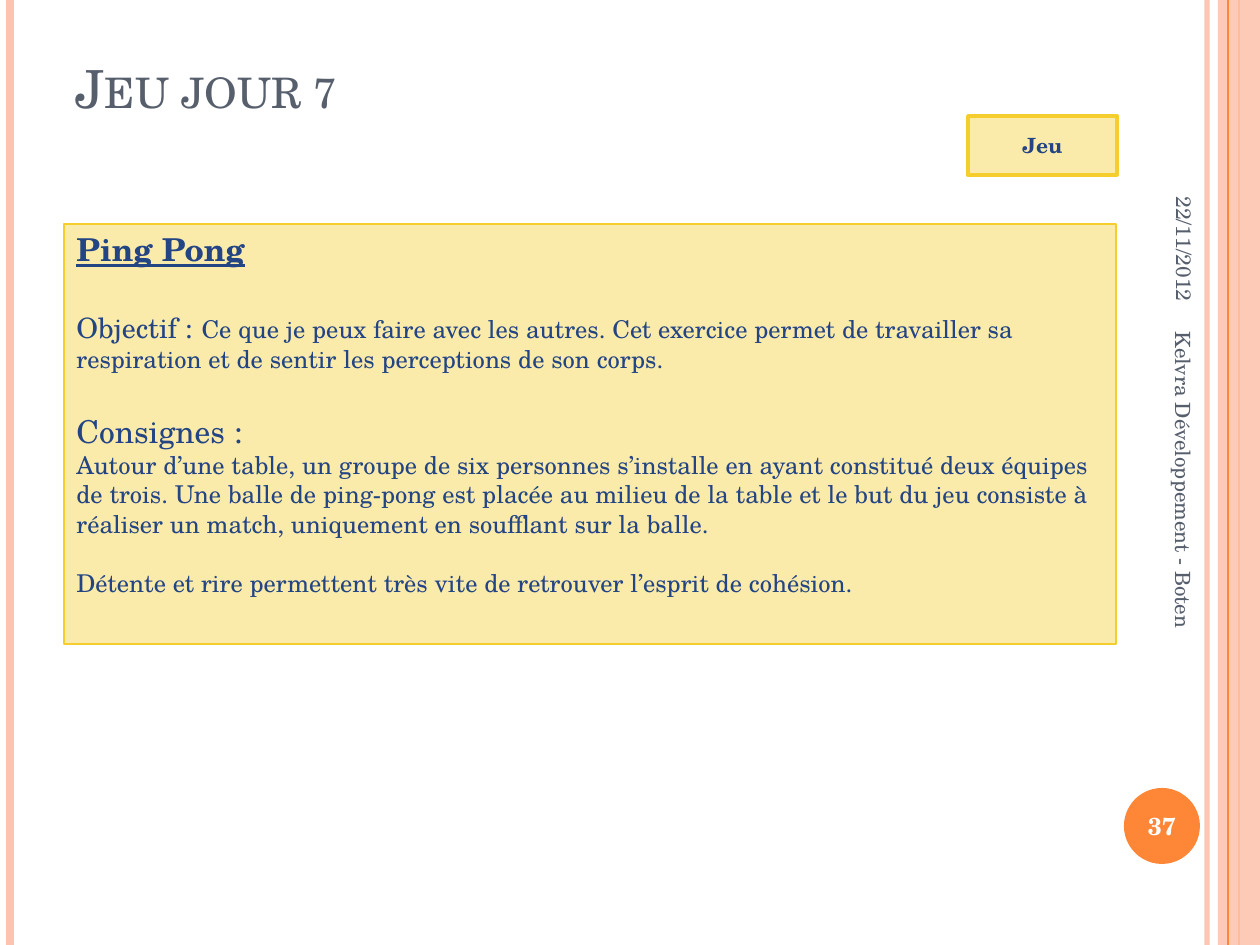
from lxml import etree
from pptx import Presentation
from pptx import util as u
from pptx.dml.color import RGBColor
from pptx.enum import shapes, text
from pptx.oxml import ns

PX = 914400 / 126
FONT = "TeX Gyre Schola"
PEACH, ORANGE, GREY, NAVY = "FEC3AE", "FE8637", "575F6D", "244583"
CREAM, GOLD, WHITE = "FBEBAB", "F5CD2D", "FFFFFF"
LEFT, CENTER, RIGHT = text.PP_ALIGN.LEFT, text.PP_ALIGN.CENTER, text.PP_ALIGN.RIGHT
TOP, MIDDLE, BOTTOM = text.MSO_ANCHOR.TOP, text.MSO_ANCHOR.MIDDLE, text.MSO_ANCHOR.BOTTOM


def emu(*lengths):
    return [u.Emu(round(n * PX)) for n in lengths]


def paint(color_format, color, opacity=100):
    color_format.rgb = RGBColor.from_string(color)
    if opacity < 100:
        for rgb in color_format._xFill.iter(ns.qn("a:srgbClr")):
            etree.SubElement(rgb, ns.qn("a:alpha"), val=str(opacity * 1000))


def add_run(paragraph, words, size, color, bold=False, underline=False):
    run = paragraph.add_run()
    run.text = words
    font = run.font
    font.name, font.size = FONT, u.Pt(size)
    font.bold, font.underline = bold, underline
    paint(font.color, color)
    return run


def set_frame(shape, anchor, align=LEFT, wrap=True):
    """Prepare the text frame and return its first paragraph."""
    frame = shape.text_frame
    frame.word_wrap, frame.vertical_anchor = wrap, anchor
    frame.auto_size = text.MSO_AUTO_SIZE.NONE
    frame.paragraphs[0].alignment = align
    return frame.paragraphs[0]


def add_block(slide, kind, box, fill, line=None, width=0, opacity=100):
    block = slide.shapes.add_shape(kind, *emu(*box))
    block.shadow.inherit = False
    block.fill.solid()
    paint(block.fill.fore_color, fill, opacity)
    if line:
        paint(block.line.color, line)
        block.line.width = u.Pt(width)
    else:
        block.line.fill.background()
    return block


def add_rule(slide, x, height, color, width, opacity=100):
    rule = slide.shapes.add_connector(shapes.MSO_CONNECTOR.STRAIGHT, *emu(x, 0, x, height))
    rule.line.width = u.Pt(width)
    paint(rule.line.color, color, opacity)
    etree.SubElement(rule._element.spPr, ns.qn("a:effectLst"))


def add_borders(slide, width, height):
    add_rule(slide, width - 53, height, PEACH, 3, 93)
    add_rule(slide, 10, height, PEACH, 4.5)
    add_rule(slide, width - 21, height, ORANGE, 1.5)
    add_block(slide, shapes.MSO_SHAPE.RECTANGLE, (width - 42, 0, 42, height), PEACH, opacity=87)
    add_rule(slide, width - 32, height, ORANGE, 0.75)


def add_title(slide, box, words):
    title = slide.shapes.title
    title.left, title.top, title.width, title.height = emu(*box)
    run = add_run(set_frame(title, BOTTOM), words, 30, GREY)
    run.font._element.set("cap", "small")


def add_side_text(slide, box, words, align):
    """Add text turned clockwise; box is as it stands before the turn."""
    side = slide.shapes.add_textbox(*emu(*box))
    side.rotation = 90
    add_run(set_frame(side, MIDDLE, align), words, 12, GREY)


def add_page_number(slide, box, number):
    badge = add_block(slide, shapes.MSO_SHAPE.OVAL, box, ORANGE)
    add_run(set_frame(badge, MIDDLE, CENTER, wrap=False), number, 14, WHITE, bold=True)


def add_tag(slide, box, words):
    tag = add_block(slide, shapes.MSO_SHAPE.RECTANGLE, box, CREAM, GOLD, 2)
    add_run(set_frame(tag, MIDDLE, CENTER), words, 12, NAVY, bold=True)


def add_game(slide, box, name, sections):
    """Add the card; each section is (space before, [(words, size), ...])."""
    card = add_block(slide, shapes.MSO_SHAPE.RECTANGLE, box, CREAM, GOLD, 0.75)
    add_run(set_frame(card, TOP), name, 18, NAVY, bold=True, underline=True)
    for gap, runs in sections:
        paragraph = card.text_frame.add_paragraph()
        paragraph.alignment, paragraph.space_before = LEFT, u.Pt(gap)
        for words, size in runs:
            add_run(paragraph, words, size, NAVY)


def main():
    width, height = 1260, 945
    deck = Presentation()
    deck.slide_width, deck.slide_height = emu(width, height)
    slide = deck.slides.add_slide(deck.slide_layouts[5])

    add_borders(slide, width, height)
    add_page_number(slide, (1124, 788, 76, 76), "37")
    add_title(slide, (63, 38, 1029, 87), "Jeu jour 7")
    add_side_text(slide, (1046, 149, 277, 53), "22/11/2012", RIGHT)
    add_side_text(slide, (963, 515, 441, 50), "Kelvra Développement - Boten", LEFT)
    add_game(slide, (64, 224, 1052, 420), "Ping Pong", [
        (22, [("Objectif :", 16), (" ", 18),
              ("Ce que je peux faire avec les autres. Cet exercice permet de travailler "
               "sa respiration et de sentir les perceptions de son corps.", 14)]),
        (22, [("Consignes :", 18)]),
        (0, [("Autour d’une table, un groupe de six personnes s’installe en ayant "
              "constitué deux équipes de trois. Une balle de ping-pong est placée au "
              "milieu de la table et le but du jeu consiste à réaliser un match, "
              "uniquement en soufflant sur la balle.", 14)]),
        (17, [("Détente et rire permettent très vite de retrouver l’esprit de cohésion.", 14)]),
    ])
    add_tag(slide, (968, 116, 149, 59), "Jeu")
    deck.save("out.pptx")


if __name__ == "__main__":
    main()
